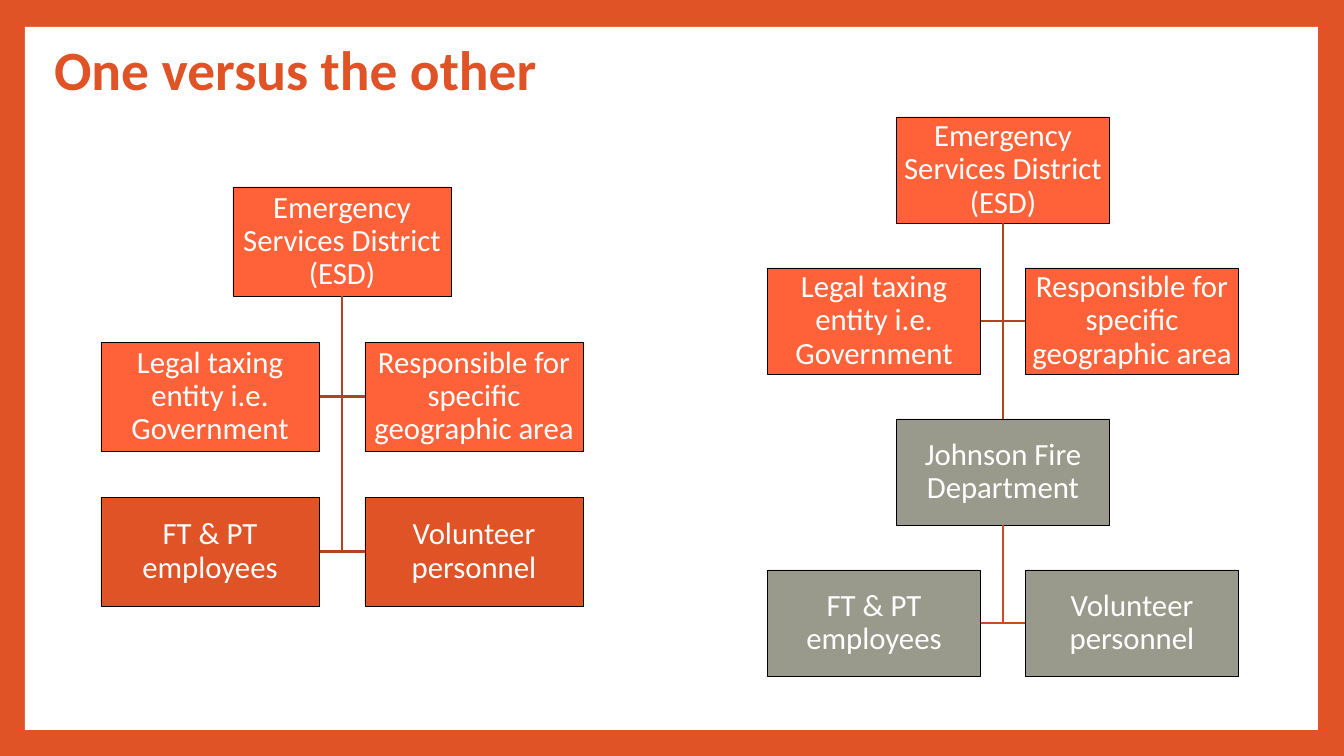
"""Build a slide that compares two organisation charts of an emergency district."""
from lxml.etree import SubElement
from pptx import Presentation
from pptx.dml.color import RGBColor
from pptx.enum.shapes import MSO_CONNECTOR, MSO_SHAPE
from pptx.enum.text import MSO_ANCHOR, MSO_AUTO_SIZE, PP_ALIGN
from pptx.oxml.ns import qn
from pptx.util import Emu, Pt

TITLE = "One versus the other"
DISTRICT = ("district", ["Emergency Services District (ESD)"])
DUTIES = ("district", ["Legal taxing entity i.e. Government",
                       "Responsible for specific geographic area"])
STAFF = ["FT & PT employees", "Volunteer personnel"]
CHARTS = [
    {"centre": 342, "top": 187, "width": 218, "height": 109, "gap": 46,
     "lines": ["district line"],
     "rows": [DISTRICT, DUTIES, ("staff", STAFF)]},
    {"centre": 1003, "top": 117, "width": 213, "height": 106, "gap": 45,
     "lines": ["district line", "department line"],
     "rows": [DISTRICT, DUTIES, ("department", ["Johnson Fire Department"]),
              ("department", STAFF)]},
]
COLOURS = {"frame": "DF5327", "panel": "FFFFFF", "title": "DF5327", "text": "FFFFFF",
           "border": "000000", "district": "FF6238", "staff": "DF5327",
           "department": "9A9A8C", "district line": "B3421F", "department line": "CA4B23"}
TITLE_FONT = {"name": "Calibri", "size": Pt(39.6), "bold": True}
BOX_FONT = {"name": "Calibri", "size": Pt(22), "bold": False}
PX_PER_INCH = 100.8


def px(length):
    return Emu(round(length * 914400 / PX_PER_INCH))


def colour(name):
    return RGBColor.from_string(COLOURS[name])


def set_all(target, values):
    for name, value in values.items():
        setattr(target, name, value)


def write(shape, text, font, text_colour, align, inset):
    frame = shape.text_frame
    set_all(frame, {"word_wrap": True, "auto_size": MSO_AUTO_SIZE.NONE,
                    "vertical_anchor": MSO_ANCHOR.MIDDLE,
                    "margin_left": px(inset), "margin_right": px(inset),
                    "margin_top": px(2), "margin_bottom": px(2)})
    para = frame.paragraphs[0]
    set_all(para, {"alignment": align, "line_spacing": 0.9, "space_before": Pt(0)})
    span = para.add_run()
    span.text = text
    set_all(span.font, font)
    span.font.color.rgb = colour(text_colour)


def add_rect(page, left, top, width, height, fill):
    rect = page.shapes.add_shape(MSO_SHAPE.RECTANGLE, px(left), px(top), px(width), px(height))
    rect.shadow.inherit = False
    rect.fill.solid()
    rect.fill.fore_color.rgb = colour(fill)
    return rect


def add_box(page, left, top, chart, fill, label):
    box = add_rect(page, left, top, chart["width"], chart["height"], fill)
    box.line.color.rgb = colour("border")
    box.line.width = Pt(0.25)
    write(box, label, BOX_FONT, "text", PP_ALIGN.CENTER, 2)


def style_line(shape, line_colour):
    shape.line.color.rgb = colour(line_colour)
    shape.line.width = Pt(1.5)


def add_trunk(page, x, start, end, line_colour):
    trunk = page.shapes.add_connector(MSO_CONNECTOR.STRAIGHT, px(x), px(start), px(x), px(end))
    style_line(trunk, line_colour)
    SubElement(trunk._element.spPr, qn("a:effectLst"))


def add_branch(page, x, start, end_x, end, line_colour):
    builder = page.shapes.build_freeform(px(x), px(start), scale=1.0)
    builder.add_line_segments([(px(x), px(end)), (px(end_x), px(end))], close=False)
    branch = builder.convert_to_shape()
    branch.shadow.inherit = False
    branch.fill.background()
    style_line(branch, line_colour)


def add_chart_tree(page, chart):
    centre, width, height, gap = (chart[key] for key in ("centre", "width", "height", "gap"))
    line_colours = iter(chart["lines"])
    head_bottom = line_colour = None
    for index, (fill, labels) in enumerate(chart["rows"]):
        top = chart["top"] + index * (height + gap)
        if len(labels) == 1:
            if head_bottom is not None:
                add_trunk(page, centre, head_bottom, top, line_colour)
            add_box(page, centre - width / 2, top, chart, fill, labels[0])
            head_bottom, line_colour = top + height, next(line_colours)
            continue
        for side, label in zip((-1, 1), labels):
            edge = centre + side * gap / 2
            add_branch(page, centre, head_bottom, edge, top + height / 2, line_colour)
            add_box(page, min(edge, edge + side * width), top, chart, fill, label)


def main():
    deck = Presentation()
    set_all(deck, {"slide_width": px(1344), "slide_height": px(756)})
    page = deck.slides.add_slide(deck.slide_layouts.get_by_name("Title Only"))
    page.background.fill.solid()
    page.background.fill.fore_color.rgb = colour("frame")

    panel = add_rect(page, 25, 27, 1293, 703, "panel")
    panel.line.fill.background()
    title = page.shapes.title
    title._element.addprevious(panel._element)
    set_all(title, {"left": px(44), "top": px(44), "width": px(1170), "height": px(58)})
    write(title, TITLE, TITLE_FONT, "title", PP_ALIGN.LEFT, 10)

    for chart in CHARTS:
        add_chart_tree(page, chart)
    deck.save("out.pptx")


if __name__ == "__main__":
    main()
